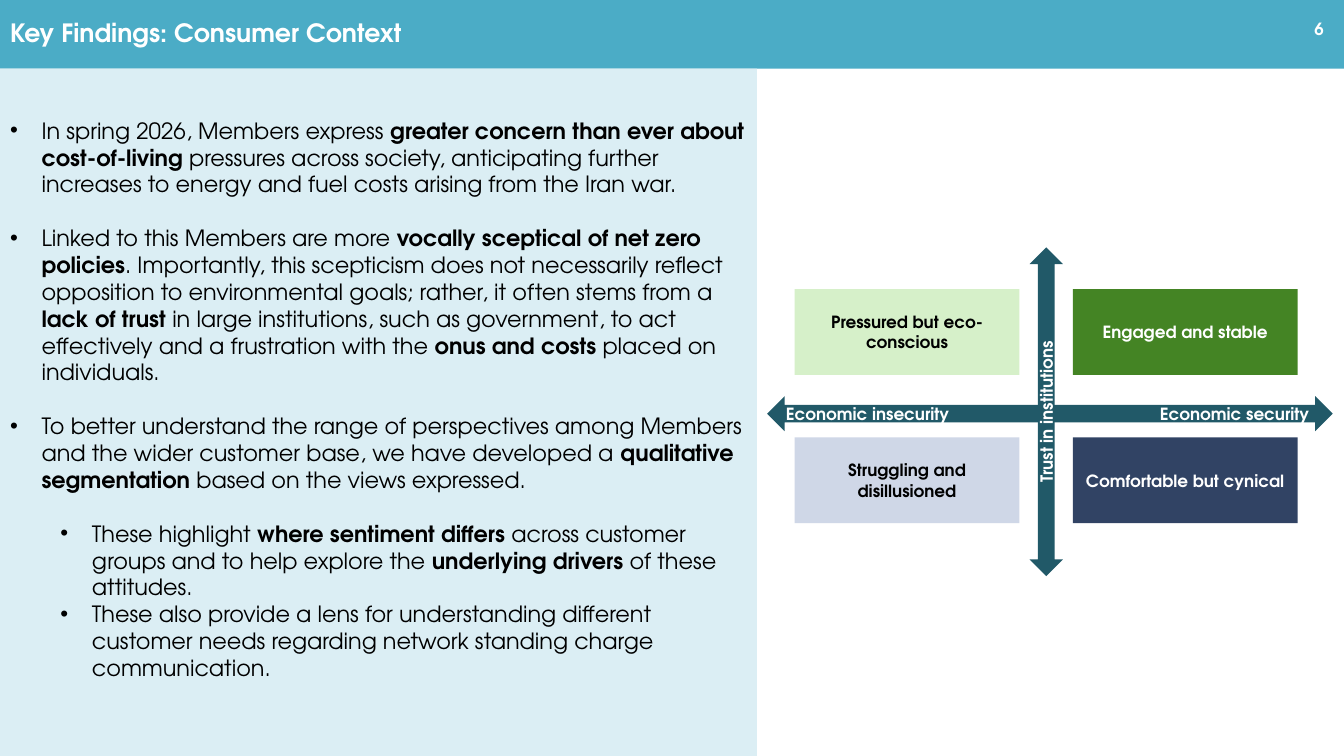
from pptx import Presentation
from pptx.dml.color import RGBColor
from pptx.enum.shapes import MSO_SHAPE
from pptx.enum.text import MSO_ANCHOR, MSO_AUTO_SIZE, PP_ALIGN
from pptx.oxml.ns import qn
from pptx.util import Pt
from lxml import etree

LEFT, CENTER, RIGHT = PP_ALIGN.LEFT, PP_ALIGN.CENTER, PP_ALIGN.RIGHT
RECTANGLE, DOUBLE_ARROW = MSO_SHAPE.RECTANGLE, MSO_SHAPE.LEFT_RIGHT_ARROW
FONT = "TeX Gyre Adventor"
COLORS = {
    "banner": "4BACC6", "panel": "DBEEF4", "axis": "215968",
    "black": "000000", "white": "FFFFFF",
    "pressured": "D6F0C9", "engaged": "448424",
    "struggling": "CFD7E7", "comfortable": "314364",
}

TITLE = "Key Findings: Consumer Context"
PAGE_NUMBER = "6"
# (level, space before, text); words between asterisks are bold
FINDINGS = [
    (0, 0, "In spring 2026, Members express *greater concern than ever about "
           "cost-of-living* pressures across society, anticipating further increases "
           "to energy and fuel costs arising from the Iran war."),
    (0, 19.2, "Linked to this Members are more *vocally sceptical of net zero policies*. "
              "Importantly, this scepticism does not necessarily reflect opposition to "
              "environmental goals; rather, it often stems from a *lack of trust *in large "
              "institutions, such as government, to act effectively and a frustration with "
              "the *onus and costs *placed on individuals."),
    (0, 19.2, "To better understand the range of perspectives among Members and the wider "
              "customer base, we have developed a *qualitative segmentation* based on the "
              "views expressed."),
    (1, 19.2, "These highlight *where sentiment differs* across customer groups and to help "
              "explore the *underlying drivers *of these attitudes."),
    (1, 0, "These also provide a lens for understanding different customer needs regarding "
           "network standing charge communication."),
]
# rows from top to bottom, columns from left to right
SEGMENTS = [
    [("Pressured but eco-conscious", "pressured", "black"),
     ("Engaged and stable", "engaged", "white")],
    [("Struggling and disillusioned", "struggling", "black"),
     ("Comfortable but cynical", "comfortable", "white")],
]
ECONOMIC_AXIS = "Economic insecurity\tEconomic security"
TRUST_AXIS = "Trust in institutions"

PAGE_WIDTH, PAGE_HEIGHT, BANNER_HEIGHT, PANEL_WIDTH = 960, 540, 49, 540.7
SEGMENT_LEFT, SEGMENT_TOP, SEGMENT_WIDTH, SEGMENT_HEIGHT = 567.6, 206.6, 160.6, 61.2
COLUMN_STEP, ROW_STEP = 198.7, 105.9
BULLET_INDENT, LEVEL_STEP = 22.5, 36


def color(name):
    return RGBColor.from_string(COLORS[name])


def place(shape, left, top, width, height):
    values = {"left": left, "top": top, "width": width, "height": height}
    for name, value in values.items():
        setattr(shape, name, Pt(value))


def paint(shape, fill):
    shape.fill.solid()
    shape.fill.fore_color.rgb = color(fill)
    shape.line.fill.background()


def prepare_frame(shape):
    frame = shape.text_frame
    values = {"word_wrap": True, "auto_size": MSO_AUTO_SIZE.NONE,
              "vertical_anchor": MSO_ANCHOR.MIDDLE}
    for name, value in values.items():
        setattr(frame, name, value)
    return frame


def add_span(para, text, size, ink, bold):
    span = para.add_run()
    span.text = text
    values = {"name": FONT, "size": Pt(size), "bold": bold}
    for name, value in values.items():
        setattr(span.font, name, value)
    span.font.color.rgb = color(ink)


def write_label(shape, text, size=12, ink="white", align=CENTER, line_spacing=1.0):
    para = prepare_frame(shape).paragraphs[0]
    values = {"alignment": align, "space_before": Pt(0), "line_spacing": line_spacing}
    for name, value in values.items():
        setattr(para, name, value)
    add_span(para, text, size, ink, True)
    return para


def add_filled_shape(slide, kind, bounds, fill):
    shape = slide.shapes.add_shape(kind, *map(Pt, bounds))
    shape.shadow.inherit = False
    paint(shape, fill)
    return shape


def add_right_tab(para, position):
    tabs = etree.SubElement(para._p.get_or_add_pPr(), qn("a:tabLst"))
    etree.SubElement(tabs, qn("a:tab"), pos=str(Pt(position)), algn="r")


def add_bullet(para, level):
    properties = para._p.get_or_add_pPr()
    properties.set("marL", str(Pt(BULLET_INDENT + level * LEVEL_STEP)))
    properties.set("indent", str(-Pt(BULLET_INDENT)))
    etree.SubElement(properties, qn("a:buFont"), typeface="Arial")
    etree.SubElement(properties, qn("a:buChar"), char="•")


def write_findings(body):
    frame = prepare_frame(body)
    frame.margin_bottom = Pt(22.8)
    for index, (level, gap, text) in enumerate(FINDINGS):
        para = frame.add_paragraph() if index else frame.paragraphs[0]
        add_bullet(para, level)
        values = {"level": level, "alignment": LEFT, "space_before": Pt(gap),
                  "space_after": Pt(0), "line_spacing": 1.0}
        for name, value in values.items():
            setattr(para, name, value)
        for part, piece in enumerate(text.split("*")):
            add_span(para, piece, 16, "black", part % 2 == 1)


def add_segments(slide):
    for row, segments in enumerate(SEGMENTS):
        for column, (text, fill, ink) in enumerate(segments):
            bounds = (SEGMENT_LEFT + column * COLUMN_STEP, SEGMENT_TOP + row * ROW_STEP,
                      SEGMENT_WIDTH, SEGMENT_HEIGHT)
            write_label(add_filled_shape(slide, RECTANGLE, bounds, fill), text, ink=ink)


def add_axes(slide):
    economic = add_filled_shape(slide, DOUBLE_ARROW, (548, 283, 404, 25), "axis")
    add_right_tab(write_label(economic, ECONOMIC_AXIS, align=LEFT), 374)
    trust = add_filled_shape(slide, DOUBLE_ARROW, (630, 282.2, 234.7, 23.8), "axis")
    trust.rotation = 270
    write_label(trust, TRUST_AXIS)


def main():
    deck = Presentation()
    deck.slide_width, deck.slide_height = Pt(PAGE_WIDTH), Pt(PAGE_HEIGHT)
    slide = deck.slides.add_slide(deck.slide_layouts[1])
    title, body = slide.placeholders

    place(title, 0, 0, PAGE_WIDTH, BANNER_HEIGHT)
    paint(title, "banner")
    write_label(title, TITLE, size=18, align=LEFT, line_spacing=0.9)

    place(body, 0, BANNER_HEIGHT, PANEL_WIDTH, PAGE_HEIGHT - BANNER_HEIGHT)
    paint(body, "panel")
    write_findings(body)

    number = slide.shapes.add_textbox(Pt(905.8), Pt(4.3), Pt(46.8), Pt(32.4))
    write_label(number, PAGE_NUMBER, align=RIGHT)

    add_segments(slide)
    add_axes(slide)
    deck.save("out.pptx")


if __name__ == "__main__":
    main()
